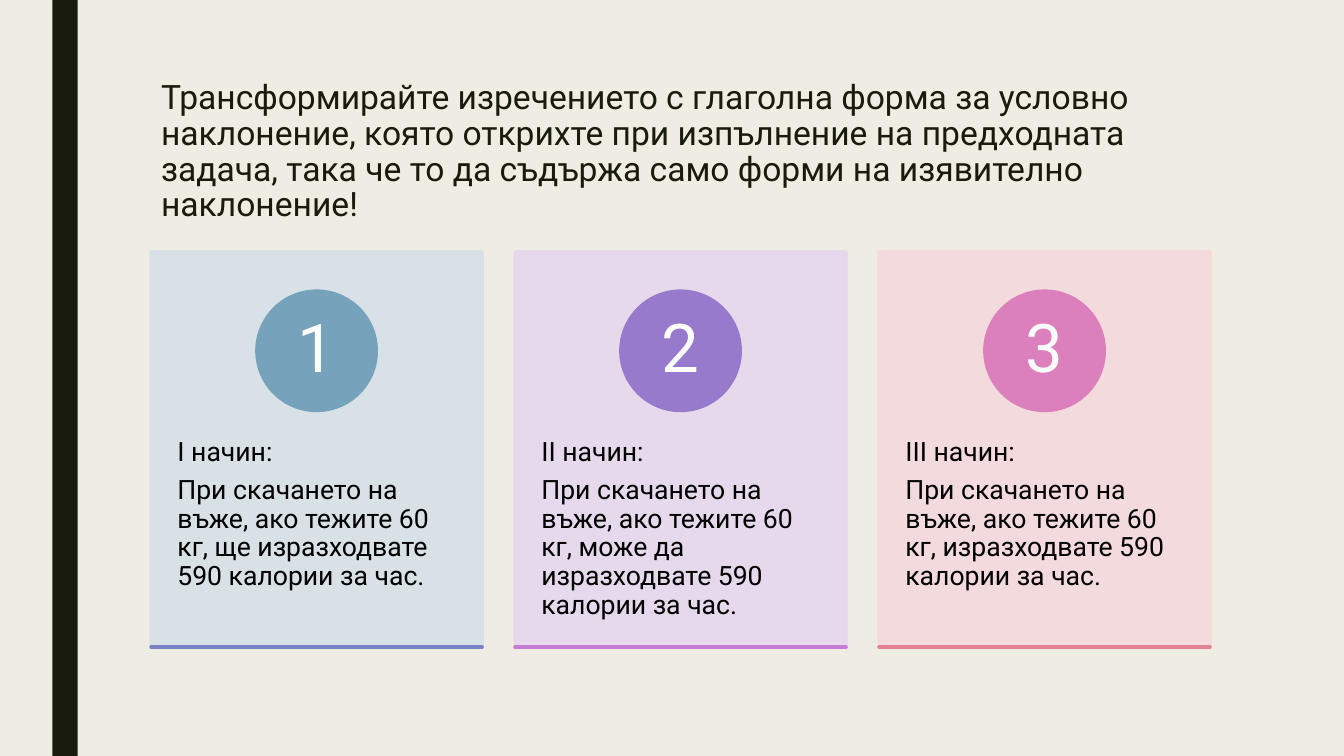
import pptx
import pptx.util
import pptx.dml.color
import pptx.enum.shapes
import pptx.enum.text
import pptx.oxml.ns
import pptx.oxml.xmlchemy

Inches = pptx.util.Inches
Pt = pptx.util.Pt
RGBColor = pptx.dml.color.RGBColor
Shapes = pptx.enum.shapes.MSO_SHAPE
Anchor = pptx.enum.text.MSO_ANCHOR
Align = pptx.enum.text.PP_ALIGN

FONT = "Roboto"
BACKGROUND = RGBColor(0xEF, 0xED, 0xE3)
DARK = RGBColor(0x19, 0x1B, 0x0E)
BLACK = RGBColor(0x00, 0x00, 0x00)
WHITE = RGBColor(0xFF, 0xFF, 0xFF)
BLUE_CARD = RGBColor(0xD6, 0xE0, 0xE7)
BLUE_CIRCLE = RGBColor(0x77, 0xA2, 0xBB)
BLUE_LINE = RGBColor(0x78, 0x83, 0xC4)
PURPLE_CARD = RGBColor(0xE6, 0xD7, 0xEE)
PURPLE_CIRCLE = RGBColor(0x97, 0x7A, 0xCC)
PURPLE_LINE = RGBColor(0xC6, 0x7C, 0xD4)
PINK_CARD = RGBColor(0xF4, 0xD9, 0xDC)
PINK_CIRCLE = RGBColor(0xDB, 0x7F, 0xBD)
PINK_LINE = RGBColor(0xE2, 0x83, 0x94)

TITLE = (
    "Трансформирайте изречението с глаголна форма за условно наклонение, "
    "която открихте при изпълнение на предходната задача, така че то да "
    "съдържа само форми на изявително наклонение!"
)
CARDS = [
    ("I начин:",
     "При скачането на въже, ако тежите 60 кг, ще изразходвате 590 калории за час.",
     BLUE_CARD, BLUE_CIRCLE, BLUE_LINE),
    ("II начин:",
     "При скачането на въже, ако тежите 60 кг, може да изразходвате 590 калории за час.",
     PURPLE_CARD, PURPLE_CIRCLE, PURPLE_LINE),
    ("III начин:",
     "При скачането на въже, ако тежите 60 кг, изразходвате 590 калории за час.",
     PINK_CARD, PINK_CIRCLE, PINK_LINE),
]
CARD_WIDTH = 3.28
CARD_STEP = 3.61
LINE_WIDTH = Pt(2.75)


def add_block(slide, kind, box, color, line_width=None):
    shape = slide.shapes.add_shape(kind, *[Inches(value) for value in box])
    shape.shadow.inherit = False
    shape.fill.solid()
    shape.fill.fore_color.rgb = color
    if line_width is None:
        shape.line.fill.background()
    else:
        shape.line.color.rgb = color
        shape.line.width = line_width
    return shape


def set_text(shape, text, size, color, insets, anchor=Anchor.TOP,
             align=Align.LEFT, spacing=0.9, space_after=0):
    frame = shape.text_frame
    frame.text = text
    frame.word_wrap = True
    frame.vertical_anchor = anchor
    frame.margin_left, frame.margin_top, frame.margin_right, frame.margin_bottom = [
        Inches(inset) for inset in insets
    ]
    for paragraph in frame.paragraphs:
        paragraph.alignment = align
        paragraph.line_spacing = spacing
        paragraph.space_after = Pt(space_after)
        for run in paragraph.runs:
            run.font.name = FONT
            run.font.size = Pt(size)
            run.font.color.rgb = color


def set_opacity(shape, percent):
    for color in shape.element.spPr.iter(pptx.oxml.ns.qn("a:srgbClr")):
        alpha = pptx.oxml.xmlchemy.OxmlElement("a:alpha")
        alpha.set("val", str(percent * 1000))
        color.append(alpha)


def add_bottom_line(slide, left, top, width, color):
    connector = slide.shapes.add_connector(
        pptx.enum.shapes.MSO_CONNECTOR.STRAIGHT,
        Inches(left), Inches(top), Inches(left + width), Inches(top),
    )
    connector.line.color.rgb = color
    connector.line.width = LINE_WIDTH
    properties = connector.element.spPr
    properties.find(pptx.oxml.ns.qn("a:ln")).set("cap", "rnd")
    properties.append(pptx.oxml.xmlchemy.OxmlElement("a:effectLst"))


def add_title(slide, box):
    title = slide.shapes.add_textbox(*[Inches(value) for value in box])
    set_text(title, TITLE, 24, DARK, (0.1, 0.05, 0.1, 0.05), spacing=0.89)


def add_card(slide, box, number, heading, body, card_color, circle_color, line_color):
    left, top, width, height = box
    card = add_block(slide, Shapes.RECTANGLE, box, card_color, LINE_WIDTH)
    set_opacity(card, 90)
    set_text(card, f"{heading}\n{body}", 19, BLACK, (0.26, 1.85, 0.26, 0.44),
             space_after=6.65)

    diameter = 1.18
    circle_box = (left + (width - diameter) / 2, top + 0.39, diameter, diameter)
    circle = add_block(slide, Shapes.OVAL, circle_box, circle_color, LINE_WIDTH)
    set_text(circle, str(number), 48, WHITE, (0, 0, 0, 0), Anchor.MIDDLE, Align.CENTER)

    add_bottom_line(slide, left, top + height, width, line_color)


def main():
    presentation = pptx.Presentation()
    presentation.slide_width = Inches(13.33)
    presentation.slide_height = Inches(7.5)
    slide = presentation.slides.add_slide(presentation.slide_layouts[6])
    slide.background.fill.solid()
    slide.background.fill.fore_color.rgb = BACKGROUND

    add_block(slide, Shapes.RECTANGLE, (0.52, 0, 0.25, 7.5), DARK)
    add_title(slide, (1.5, 0.75, 10.5, 1.62))
    for index, card in enumerate(CARDS):
        box = (1.5 + index * CARD_STEP, 2.5, CARD_WIDTH, 3.92)
        add_card(slide, box, index + 1, *card)

    presentation.save("out.pptx")


if __name__ == "__main__":
    main()
